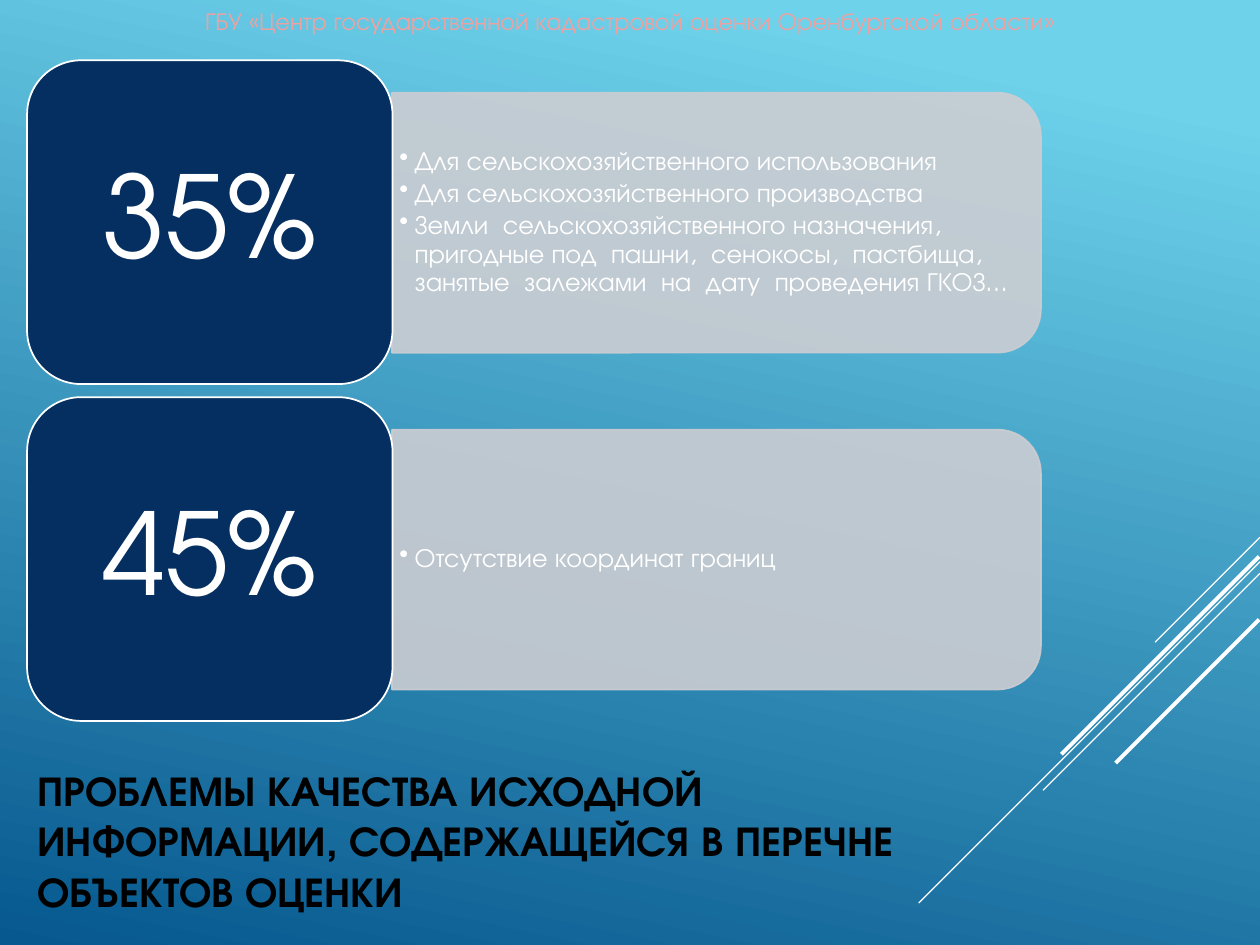
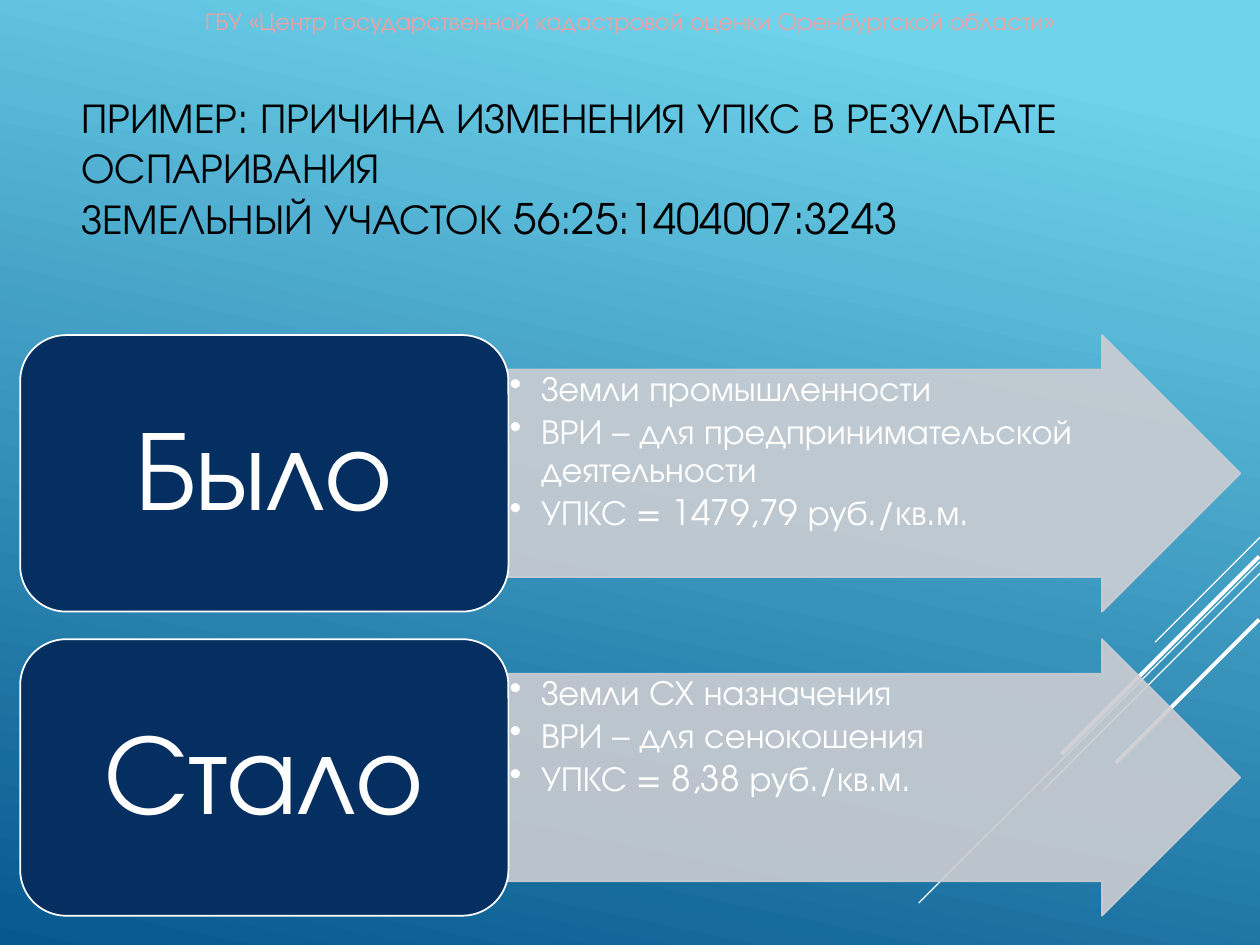
"""Build two slides on land valuation data quality and a disputed cadastral value."""
from lxml import etree
from pptx import Presentation
from pptx.dml.color import RGBColor
from pptx.enum.shapes import MSO_CONNECTOR, MSO_SHAPE
from pptx.enum.text import MSO_ANCHOR, PP_ALIGN
from pptx.oxml.ns import qn
from pptx.util import Pt

SKY = RGBColor(0x6E, 0xD2, 0xEB)
DEEP_BLUE = RGBColor(0x06, 0x58, 0x8E)
NAVY = RGBColor(0x05, 0x2F, 0x61)
PANEL_GREY = RGBColor(0xCC, 0xCD, 0xD2)
PINK = RGBColor(0xEE, 0xA1, 0xA1)
WHITE = RGBColor(0xFF, 0xFF, 0xFF)
BLACK = RGBColor(0x00, 0x00, 0x00)
FONT = "TeX Gyre Adventor"
STRAIGHT = MSO_CONNECTOR.STRAIGHT
ROUNDED = MSO_SHAPE.ROUNDED_RECTANGLE
HALF_ROUNDED = MSO_SHAPE.ROUND_2_SAME_RECTANGLE
RIGHT_ARROW = MSO_SHAPE.RIGHT_ARROW
LEFT, CENTER = PP_ALIGN.LEFT, PP_ALIGN.CENTER
TOP, MIDDLE = MSO_ANCHOR.TOP, MSO_ANCHOR.MIDDLE

WIDTH, HEIGHT = 720, 540
HEADER = "ГБУ «Центр государственной кадастровой оценки Оренбургской области»"
DIAGONALS = [
    (720, 307, 60, 0.75),
    (720, 321, 195, 0.75),
    (720, 327.6, 124, 0.75),
    (719.5, 318, 113, 2.25),
    (719.5, 354, 82, 2.25),
]
SLIDES = [
    {
        "title": "ПРОБЛЕМЫ КАЧЕСТВА ИСХОДНОЙ ИНФОРМАЦИИ, СОДЕРЖАЩЕЙСЯ В ПЕРЕЧНЕ ОБЪЕКТОВ ОЦЕНКИ",
        "title_box": (14.4, 420, 516, 120),
        "bold": True,
        "label_box": (15.5, 34.5, 208.8, 185),
        "panel_box": (224, 53, 370.8, 148.5),
        "list_box": (224, 60, 363.6, 134),
        "panel_shape": HALF_ROUNDED,
        "step": 192.5,
        "size": 15,
        "indent": 8.8,
        "margins": (4.2, 2.2),
        "anchor": MIDDLE,
        "rows": [
            ("35%", [
                "Для сельскохозяйственного использования",
                "Для сельскохозяйственного производства",
                "Земли  сельскохозяйственного назначения,  пригодные под  пашни,  сенокосы,  "
                "пастбища,  занятые  залежами  на  дату  проведения ГКОЗ…",
            ]),
            ("45%", ["Отсутствие координат границ"]),
        ],
    },
    {
        "title": "ПРИМЕР: ПРИЧИНА ИЗМЕНЕНИЯ УПКС В РЕЗУЛЬТАТЕ ОСПАРИВАНИЯ\v"
                 "ЗЕМЕЛЬНЫЙ УЧАСТОК 56:25:1404007:3243",
        "title_box": (39.5, 50.5, 648, 90),
        "bold": False,
        "label_box": (11.5, 191.5, 279, 158),
        "panel_box": (290.2, 191.5, 418.5, 158),
        "list_box": (290.2, 211, 359.3, 119),
        "panel_shape": RIGHT_ARROW,
        "step": 173.8,
        "size": 20,
        "indent": 18,
        "margins": (1, 1),
        "anchor": TOP,
        "rows": [
            ("Было", [
                "Земли промышленности",
                "ВРИ – для предпринимательской деятельности",
                "УПКС = 1479,79 руб./кв.м.",
            ]),
            ("Стало", [
                "Земли СХ назначения",
                "ВРИ – для сенокошения",
                "УПКС = 8,38 руб./кв.м.",
            ]),
        ],
    },
]


def write_text(shape, lines, size, color, align=LEFT, anchor=MIDDLE,
               margins=(7.2, 3.6), spacing=1.0, bold=False, indent=0):
    """Fill a shape with paragraphs, bulleted when an indent is given."""
    frame = shape.text_frame
    frame.word_wrap = True
    frame.vertical_anchor = anchor
    frame.margin_left = frame.margin_right = Pt(margins[0])
    frame.margin_top = frame.margin_bottom = Pt(margins[1])
    for index, line in enumerate(lines):
        paragraph = frame.add_paragraph() if index else frame.paragraphs[0]
        paragraph.text = line
        paragraph.alignment = align
        paragraph.line_spacing = spacing
        if indent:
            paragraph.space_after = Pt(size * 0.15)
            properties = paragraph._p.get_or_add_pPr()
            properties.set("marL", str(Pt(indent)))
            properties.set("indent", str(-Pt(indent)))
            etree.SubElement(properties, qn("a:buChar")).set("char", "•")
        paragraph.font.name = FONT
        paragraph.font.size = Pt(size)
        paragraph.font.bold = bold
        paragraph.font.color.rgb = color


def add_block(slide, kind, box, fill, outline):
    """Add a flat preset shape with a one-point outline."""
    shape = slide.shapes.add_shape(kind, *map(Pt, box))
    shape.shadow.inherit = False
    shape.fill.solid()
    shape.fill.fore_color.rgb = fill
    shape.line.color.rgb = outline
    shape.line.width = Pt(1)
    return shape


presentation = Presentation()
presentation.slide_width, presentation.slide_height = Pt(WIDTH), Pt(HEIGHT)

for content in SLIDES:
    slide = presentation.slides.add_slide(presentation.slide_layouts[6])
    background = slide.background.fill
    background.gradient()
    background.gradient_angle = 258
    for stop, position, color in zip(background.gradient_stops, (0.1, 1), (SKY, DEEP_BLUE)):
        stop.position = position
        stop.color.rgb = color

    for right, top, run, weight in DIAGONALS:
        diagonal = slide.shapes.add_connector(
            STRAIGHT, Pt(right), Pt(top), Pt(right - run), Pt(top + run))
        diagonal.line.color.rgb = WHITE
        diagonal.line.width = Pt(weight)
        etree.SubElement(diagonal._element.spPr, qn("a:effectLst"))

    title = slide.shapes.add_textbox(*map(Pt, content["title_box"]))
    write_text(title, [content["title"]], 24, BLACK, bold=content["bold"])

    for row, (label, items) in enumerate(content["rows"]):
        shift = row * content["step"]
        left, top, width, height = content["panel_box"]
        top += shift
        if content["panel_shape"] == HALF_ROUNDED:
            turn = (width - height) / 2
            panel_box = (left + turn, top - turn, height, width)
            panel = add_block(slide, HALF_ROUNDED, panel_box, PANEL_GREY, PANEL_GREY)
            panel.rotation = 90
        else:
            panel = add_block(slide, RIGHT_ARROW, (left, top, width, height), PANEL_GREY, PANEL_GREY)
            panel.adjustments[0] = 0.75
            panel.adjustments[1] = 0.5
        for color in panel._element.spPr.iter(qn("a:srgbClr")):
            etree.SubElement(color, qn("a:alpha")).set("val", "90000")

        left, top, width, height = content["list_box"]
        details = slide.shapes.add_textbox(Pt(left), Pt(top + shift), Pt(width), Pt(height))
        write_text(details, items, content["size"], WHITE, anchor=content["anchor"],
                   margins=content["margins"], spacing=0.9, indent=content["indent"])

        left, top, width, height = content["label_box"]
        card = add_block(slide, ROUNDED, (left, top + shift, width, height), NAVY, WHITE)
        write_text(card, [label], 65, WHITE, align=CENTER, margins=(19.5, 10), spacing=0.9)

    header = slide.shapes.add_textbox(Pt(0), Pt(0), Pt(WIDTH), Pt(24.5))
    write_text(header, [HEADER], 14, PINK, align=CENTER, anchor=TOP)

presentation.save("out.pptx")
